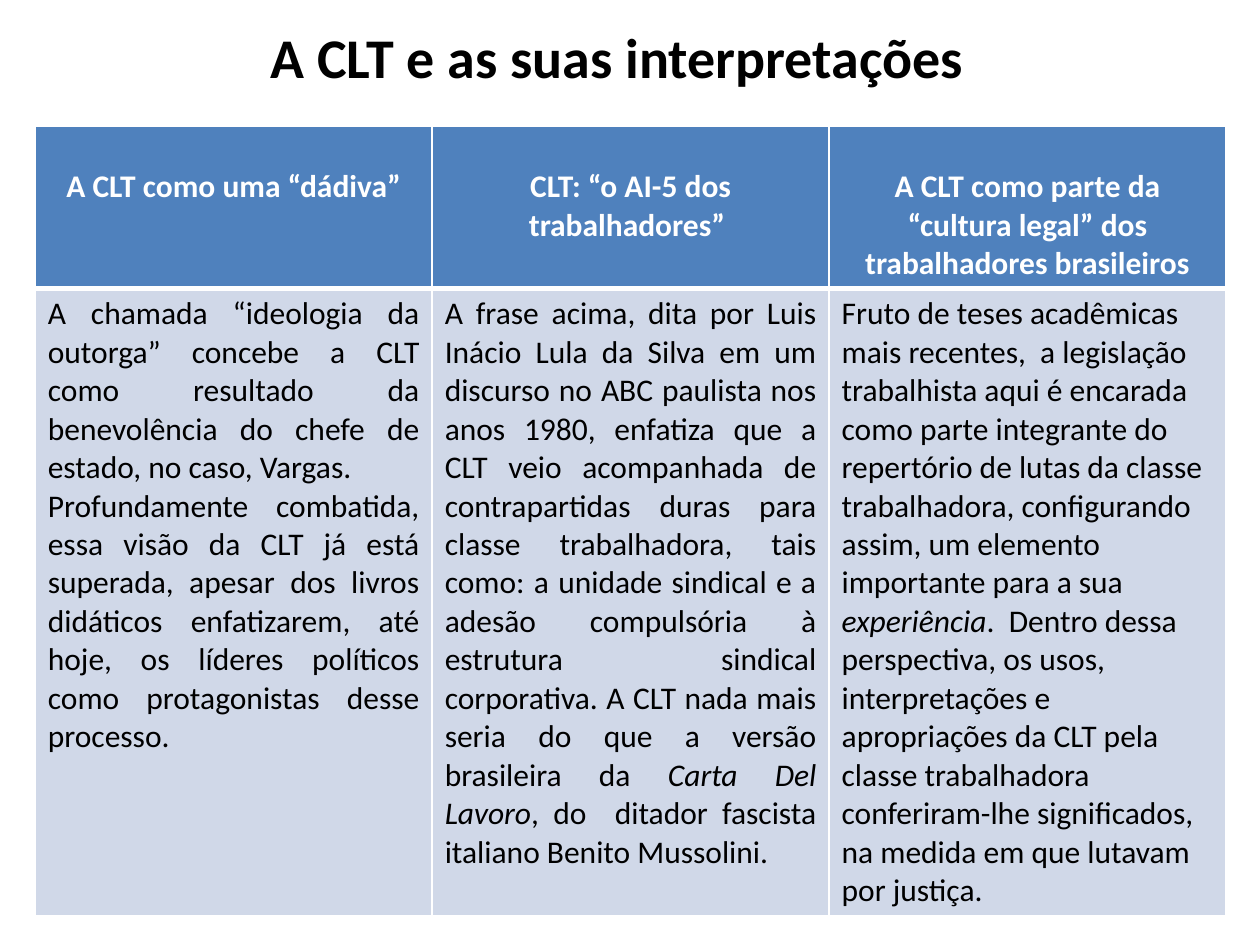
from dataclasses import dataclass

import lxml.etree
import pptx
import pptx.dml.color
import pptx.enum.text
import pptx.oxml.ns
import pptx.util

Inches = pptx.util.Inches
Pt = pptx.util.Pt
Align = pptx.enum.text.PP_ALIGN

FONT = "Calibri"
WHITE = "FFFFFF"
BLACK = "000000"
HEADER_FILL = "4F81BD"
BODY_FILL = "D0D8E8"


@dataclass(frozen=True)
class Span:
    text: str
    italic: bool = False


@dataclass(frozen=True)
class Interpretation:
    heading: str
    paragraphs: list[list[Span]]
    alignment: Align = Align.JUSTIFY


@dataclass(frozen=True)
class TextStyle:
    size: int
    color: str
    bold: bool = False


TITLE_STYLE = TextStyle(32, BLACK, True)
HEADING_STYLE = TextStyle(18, WHITE, True)
BODY_STYLE = TextStyle(18, BLACK)

INTERPRETATIONS = [
    Interpretation("A CLT como uma “dádiva”", [
        [Span("A chamada “ideologia da outorga” concebe a CLT como resultado da "
              "benevolência do chefe de estado, no caso, Vargas.")],
        [Span("Profundamente combatida, essa visão da CLT já está superada, apesar "
              "dos livros didáticos enfatizarem, até hoje, os líderes políticos como "
              "protagonistas desse processo. ")],
    ]),
    Interpretation("CLT: “o AI-5 dos trabalhadores” ", [
        [Span("A frase acima, dita por Luis Inácio Lula da Silva em um discurso no "
              "ABC paulista nos anos 1980, enfatiza que a CLT veio acompanhada de "
              "contrapartidas duras para classe trabalhadora, tais como: a unidade "
              "sindical e a adesão compulsória à estrutura sindical corporativa. A "
              "CLT nada mais seria do que a versão brasileira da "),
         Span("Carta Del Lavoro", True),
         Span(", do  ditador fascista italiano Benito Mussolini. ")],
    ]),
    Interpretation("A CLT como parte da “cultura legal” dos trabalhadores brasileiros", [
        [Span("Fruto de teses acadêmicas mais recentes,  a legislação trabalhista "
              "aqui é encarada como parte integrante do repertório de lutas da classe "
              "trabalhadora, configurando assim, um elemento importante para a sua "),
         Span("experiência", True),
         Span(".  Dentro dessa perspectiva, os usos, interpretações e apropriações "
              "da CLT pela classe trabalhadora conferiram-lhe significados, na medida "
              "em que lutavam por justiça.")],
    ], Align.LEFT),
]


def rgb(color: str) -> pptx.dml.color.RGBColor:
    return pptx.dml.color.RGBColor.from_string(color)


def write_text(text_frame, paragraphs: list[list[Span]], style: TextStyle,
               alignment: Align) -> None:
    for index, spans in enumerate(paragraphs):
        paragraph = text_frame.add_paragraph() if index else text_frame.paragraphs[0]
        paragraph.alignment = alignment
        for span in spans:
            run = paragraph.add_run()
            run.text = span.text
            run.font.name = FONT
            run.font.size = Pt(style.size)
            run.font.bold = style.bold
            run.font.italic = span.italic
            run.font.color.rgb = rgb(style.color)


def set_borders(cell, widths: dict[str, int]) -> None:
    qn = pptx.oxml.ns.qn
    properties = cell._tc.get_or_add_tcPr()
    for index, (side, width) in enumerate(widths.items()):
        line = lxml.etree.Element(qn(f"a:ln{side}"), w=str(Pt(width)))
        fill = lxml.etree.SubElement(line, qn("a:solidFill"))
        lxml.etree.SubElement(fill, qn("a:srgbClr"), val=WHITE)
        properties.insert(index, line)


def style_cell(cell, fill: str, top_width: int, bottom_width: int) -> None:
    cell.fill.solid()
    cell.fill.fore_color.rgb = rgb(fill)
    set_borders(cell, {"L": 1, "R": 1, "T": top_width, "B": bottom_width})


def add_title(slide, text: str) -> None:
    shape = slide.shapes.add_textbox(Inches(1.86), Inches(0.13), Inches(6.08), Inches(0.64))
    shape.text_frame.word_wrap = True
    write_text(shape.text_frame, [[Span(text)]], TITLE_STYLE, Align.CENTER)


def add_comparison(slide, interpretations: list[Interpretation]) -> None:
    shape = slide.shapes.add_table(2, len(interpretations), Inches(0.28), Inches(1),
                                   Inches(9.45), Inches(6.27))
    table = shape.table
    table.first_row = False
    table.horz_banding = False
    table.rows[0].height = Inches(1.29)
    table.rows[1].height = Inches(4.98)
    for column, item in enumerate(interpretations):
        heading = table.cell(0, column)
        style_cell(heading, HEADER_FILL, 1, 3)
        heading.margin_top = Inches(0.33)
        write_text(heading.text_frame, [[Span(item.heading)]], HEADING_STYLE, Align.CENTER)
        body = table.cell(1, column)
        style_cell(body, BODY_FILL, 3, 1)
        write_text(body.text_frame, item.paragraphs, BODY_STYLE, item.alignment)


def main() -> None:
    presentation = pptx.Presentation()
    presentation.slide_width = Inches(10)
    presentation.slide_height = Inches(7.5)
    slide = presentation.slides.add_slide(presentation.slide_layouts[6])
    add_title(slide, "A CLT e as suas interpretações")
    add_comparison(slide, INTERPRETATIONS)
    presentation.save("out.pptx")


if __name__ == "__main__":
    main()
